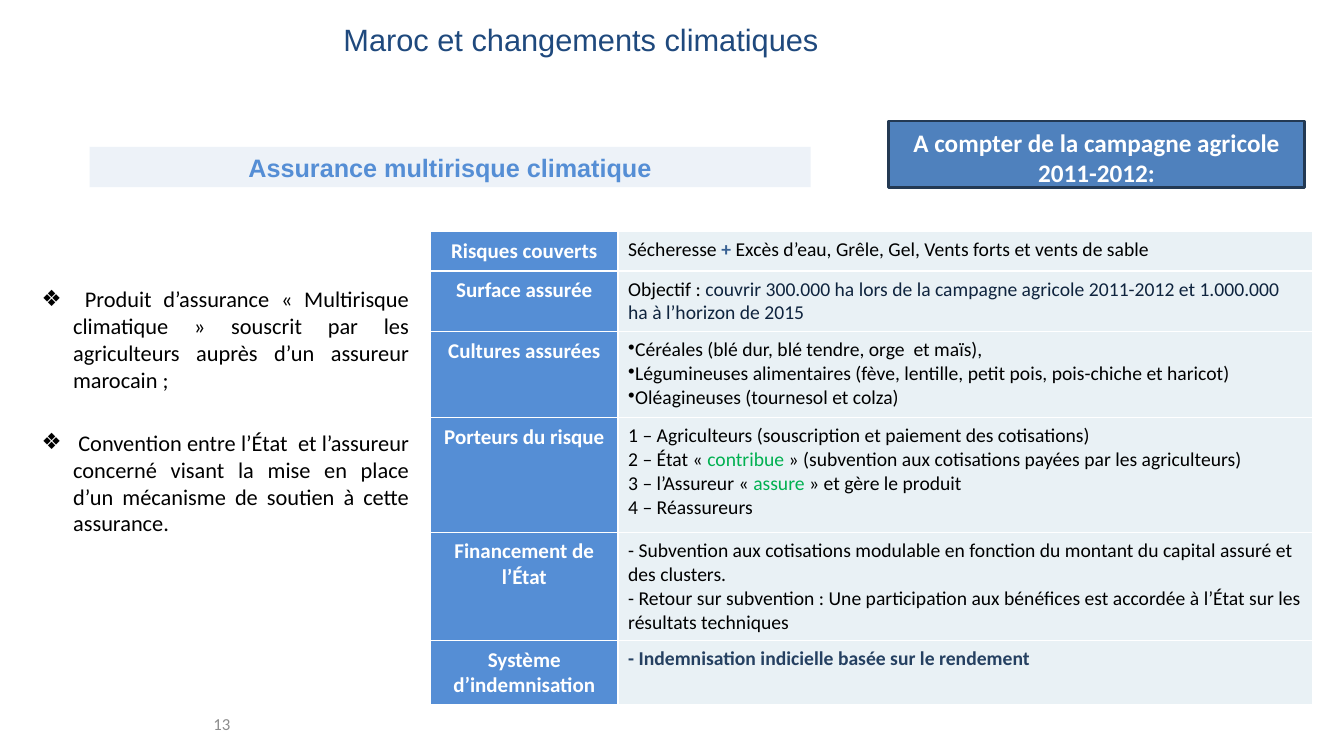
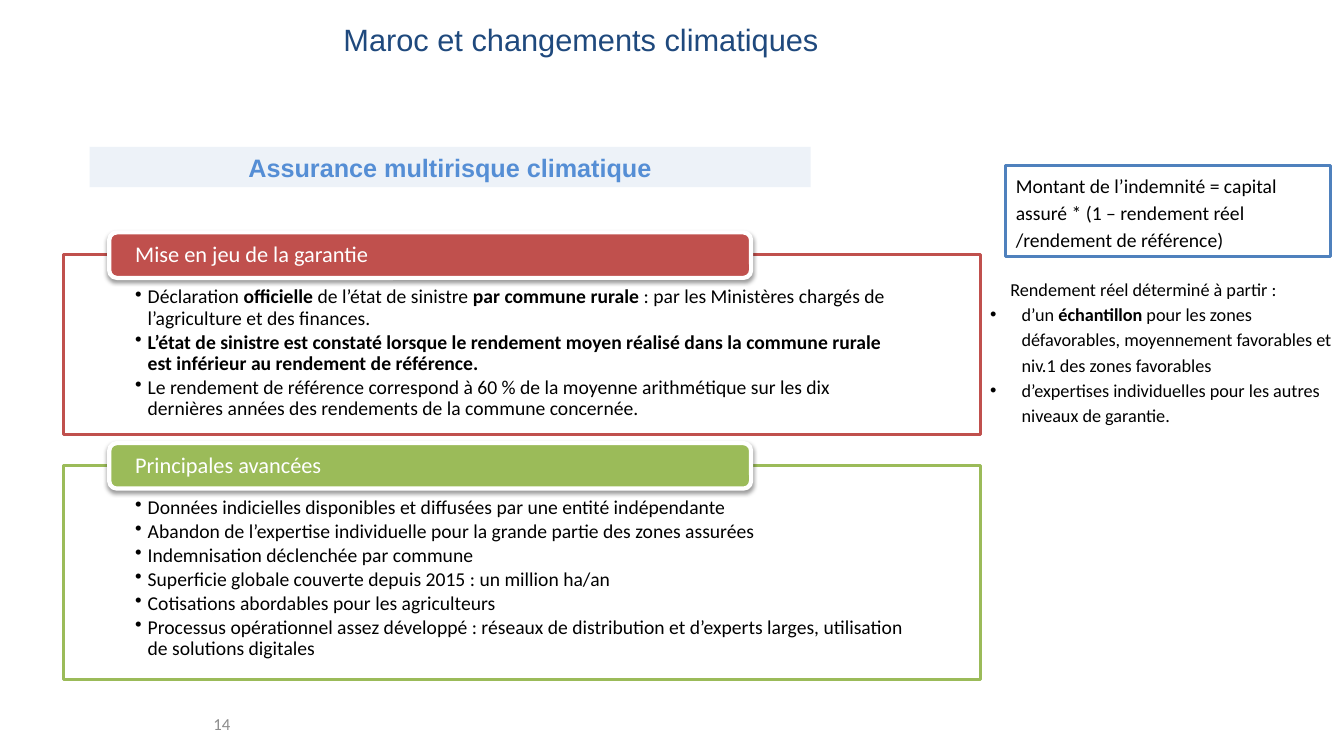
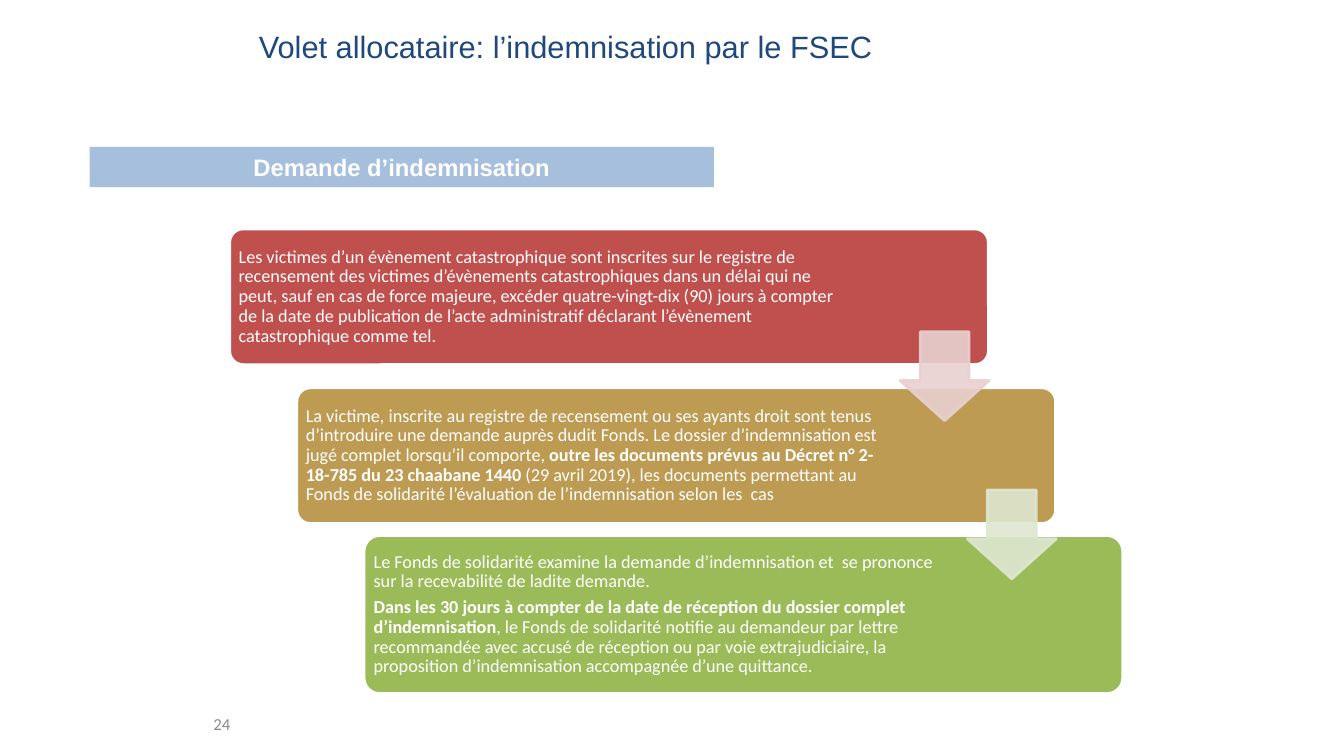
from lxml.etree import SubElement
from pptx import Presentation
from pptx.dml.color import RGBColor
from pptx.enum.shapes import MSO_SHAPE
from pptx.enum.text import MSO_ANCHOR, MSO_AUTO_SIZE, PP_ALIGN
from pptx.oxml.ns import qn
from pptx.util import Pt

BLACK = RGBColor(0x00, 0x00, 0x00)
WHITE = RGBColor(0xFF, 0xFF, 0xFF)
GREY = RGBColor(0x8C, 0x8C, 0x8C)
NAVY = RGBColor(0x1F, 0x49, 0x7D)
BLUE = RGBColor(0x4F, 0x81, 0xBD)
SKY = RGBColor(0x55, 0x8E, 0xD5)
PALE_BLUE = RGBColor(0xDC, 0xE6, 0xF2)
DARK_OUTLINE = RGBColor(0x23, 0x39, 0x53)
CELL_FILL = RGBColor(0xE9, 0xF1, 0xF5)
PLUS_BLUE = RGBColor(0x37, 0x60, 0x92)
TARGET_BLUE = RGBColor(0x0F, 0x24, 0x3E)
SYSTEM_BLUE = RGBColor(0x25, 0x40, 0x61)
KEYWORD_GREEN = RGBColor(0x00, 0xB0, 0x50)
RED = RGBColor(0xC0, 0x50, 0x4D)
OCHRE = RGBColor(0xBD, 0x9B, 0x53)
GREEN = RGBColor(0x9B, 0xBB, 0x59)
PALE_RED = RGBColor(0xE8, 0xD0, 0xD0)
PALE_GREEN = RGBColor(0xDE, 0xE7, 0xD1)

BODY_FONT = "Calibri"
HEADING_FONT = "Arial"
TITLE_ONLY = 5
TITLE_AND_BODY = 1
BOLD = {"bold": True}

COVER_ROWS = [
    (28, "Risques couverts", [
        ["Sécheresse ", ("+ ", {"color": PLUS_BLUE, "bold": True}),
         "Excès d’eau, Grêle, Gel, Vents forts et vents de sable"]]),
    (43, "Surface assurée", [
        ["Objectif :",
         (" couvrir 300.000 ha lors de la campagne agricole 2011-2012 et 1.000.000 "
          "ha à l’horizon de 2015", {"color": TARGET_BLUE})]]),
    (61.5, "Cultures assurées", [
        "Céréales (blé dur, blé tendre, orge  et maïs),",
        "Légumineuses alimentaires (fève, lentille, petit pois, pois-chiche et haricot)",
        "Oléagineuses (tournesol et colza)"]),
    (82, "Porteurs du risque", [
        "1 – Agriculteurs (souscription et paiement des cotisations)",
        ["2 – État « ", ("contribue", {"color": KEYWORD_GREEN}),
         " » (subvention aux cotisations payées par les agriculteurs)"],
        ["3 – l’Assureur « ", ("assure", {"color": KEYWORD_GREEN}),
         " » et gère le produit"],
        "4 – Réassureurs"]),
    (76.5, "Financement de l’État", [
        "- Subvention aux cotisations modulable en fonction du montant du capital "
        "assuré et des clusters.",
        "- Retour sur subvention : Une participation aux bénéfices est accordée à "
        "l’État sur les résultats techniques"]),
    (45.5, "Système d’indemnisation", [
        [("- Indemnisation indicielle basée sur le rendement",
          {"color": SYSTEM_BLUE, "bold": True})]]),
]
BULLETED_ROW = "Cultures assurées"

GUARANTEE_ITEMS = [
    ["Déclaration ", ("officielle", BOLD), " de l’état de sinistre ",
     ("par commune rurale", BOLD),
     " : par les Ministères chargés de l’agriculture et des finances."],
    [("L’état de sinistre est constaté lorsque le rendement moyen réalisé dans la "
      "commune rurale est inférieur au rendement de référence.", BOLD)],
    "Le rendement de référence correspond à 60 % de la moyenne arithmétique sur les "
    "dix dernières années des rendements de la commune concernée.",
]
PROGRESS_ITEMS = [
    "Données indicielles disponibles et diffusées par une entité indépendante",
    "Abandon de l’expertise individuelle pour la grande partie des zones assurées",
    "Indemnisation déclenchée par commune",
    "Superficie globale couverte depuis 2015 : un million ha/an",
    "Cotisations abordables pour les agriculteurs",
    "Processus opérationnel assez développé : réseaux de distribution et d’experts "
    "larges, utilisation de solutions digitales",
]

# Top, height, right margin, fill, paragraphs
CLAIM_STEPS = [
    (163.5, 97, 102, RED, [
        "Les victimes d’un évènement catastrophique sont inscrites sur le registre de "
        "recensement des victimes d’évènements catastrophiques dans un délai qui ne "
        "peut, sauf en cas de force majeure, excéder quatre-vingt-dix (90) jours à "
        "compter de la date de publication de l’acte administratif déclarant "
        "l’évènement catastrophique comme tel."]),
    (277, 97, 114, OCHRE, [
        ["La victime, inscrite au registre de recensement ou ses ayants droit sont "
         "tenus d’introduire une demande auprès dudit Fonds. Le dossier "
         "d’indemnisation est jugé complet lorsqu’il comporte, ",
         ("outre les documents prévus au Décret n° 2-18-785 du 23 chaabane 1440", BOLD),
         " (29 avril 2019), les documents permettant au Fonds de solidarité "
         "l’évaluation de l’indemnisation selon les  cas"]]),
    (382.5, 113, 115, GREEN, [
        "Le Fonds de solidarité examine la demande d’indemnisation et  se prononce "
        "sur la recevabilité de ladite demande.",
        [("Dans les 30 jours à compter de la date de réception du dossier complet "
          "d’indemnisation", BOLD),
         ", le Fonds de solidarité notifie au demandeur par lettre recommandée avec "
         "accusé de réception ou par voie extrajudiciaire, la proposition "
         "d’indemnisation accompagnée d’une quittance."]]),
]


def add_paragraph(frame, text, size=14, color=BLACK, font=BODY_FONT, bold=False,
                  align=PP_ALIGN.LEFT, bullet=None, left=0, hanging=0,
                  before=0, after=0, spacing=1.0):
    """Add text, a string or a list of strings and (string, run format) pairs."""
    paragraph = frame.add_paragraph() if frame.text else frame.paragraphs[0]
    paragraph.alignment = align
    paragraph.space_before = Pt(before)
    paragraph.space_after = Pt(after)
    paragraph.line_spacing = spacing
    properties = paragraph._p.get_or_add_pPr()
    properties.set("marL", str(Pt(left)))
    properties.set("indent", str(Pt(-hanging)))
    if bullet:
        SubElement(properties, qn("a:buChar"), char=bullet)
    else:
        SubElement(properties, qn("a:buNone"))
    for piece in [text] if isinstance(text, str) else text:
        words, changes = (piece, {}) if isinstance(piece, str) else piece
        run = paragraph.add_run()
        run.text = words
        run.font.name = font
        run.font.size = Pt(size)
        run.font.bold = changes.get("bold", bold)
        run.font.color.rgb = changes.get("color", color)


def set_frame(frame, anchor=MSO_ANCHOR.TOP, margins=(7.2, 3.6, 7.2, 3.6)):
    frame.word_wrap = True
    frame.auto_size = MSO_AUTO_SIZE.NONE
    frame.vertical_anchor = anchor
    (frame.margin_left, frame.margin_top,
     frame.margin_right, frame.margin_bottom) = map(Pt, margins)
    return frame


def place(shape, left, top, width, height):
    shape.left, shape.top = Pt(left), Pt(top)
    shape.width, shape.height = Pt(width), Pt(height)


def set_opacity(color_format_parent, percent):
    for color in color_format_parent.iter(qn("a:srgbClr")):
        SubElement(color, qn("a:alpha"), val=str(percent * 1000))


def add_box(slide, bounds, fill, line=None, line_width=2, kind=MSO_SHAPE.RECTANGLE,
            adjustments=(), opacity=None):
    shape = slide.shapes.add_shape(kind, *map(Pt, bounds))
    shape.shadow.inherit = False
    for index, value in enumerate(adjustments):
        shape.adjustments[index] = value
    shape.fill.solid()
    shape.fill.fore_color.rgb = fill
    if line is None:
        shape.line.fill.background()
    else:
        shape.line.color.rgb = line
        shape.line.width = Pt(line_width)
    if opacity:
        set_opacity(shape._element.spPr, opacity)
    return shape


def add_drop_shadow(shape):
    effects = shape._element.spPr.find(qn("a:effectLst"))
    shadow = SubElement(effects, qn("a:outerShdw"), blurRad=str(Pt(3.1)),
                        dist=str(Pt(1.6)), dir="5400000", rotWithShape="0")
    SubElement(shadow, qn("a:srgbClr"), val=str(BLACK))
    set_opacity(shadow, 38)


def start_slide(presentation, layout, title, number, left=185, top=11):
    slide = presentation.slides.add_slide(presentation.slide_layouts[layout])
    place(slide.shapes.title, left, top, 460, 34)
    add_paragraph(set_frame(slide.shapes.title.text_frame), title, size=22,
                  color=NAVY, font=HEADING_FONT, align=PP_ALIGN.CENTER)
    number_box = slide.shapes.add_textbox(Pt(3.6), Pt(502.5), Pt(168), Pt(29))
    add_paragraph(set_frame(number_box.text_frame, MSO_ANCHOR.MIDDLE), number,
                  size=12, color=GREY, align=PP_ALIGN.RIGHT)
    return slide


def add_band(slide, text, width=515, size=18, fill=PALE_BLUE, color=SKY):
    band = add_box(slide, (64, 105, width, 28.8), fill, opacity=50)
    add_paragraph(set_frame(band.text_frame, MSO_ANCHOR.MIDDLE), text, size=size,
                  color=color, font=HEADING_FONT, bold=True, align=PP_ALIGN.CENTER)


def set_cell(cell, fill):
    """Fill the cell, give it white borders and return its text frame."""
    cell.fill.solid()
    cell.fill.fore_color.rgb = fill
    cell.margin_left = cell.margin_right = Pt(7.2)
    cell.margin_top = cell.margin_bottom = Pt(4.6)
    properties = cell._tc.get_or_add_tcPr()
    for index, side in enumerate(("lnL", "lnR", "lnT", "lnB")):
        border = SubElement(properties, qn(f"a:{side}"), w=str(Pt(1)))
        solid = SubElement(border, qn("a:solidFill"))
        SubElement(solid, qn("a:srgbClr"), val=str(WHITE))
        properties.insert(index, border)
    return cell.text_frame


def add_cover_table(slide):
    total = sum(row[0] for row in COVER_ROWS)
    table = slide.shapes.add_table(len(COVER_ROWS), 2, Pt(307.5), Pt(165.6),
                                   Pt(630), Pt(total)).table
    table.first_row = table.horz_banding = False
    table.columns[0].width, table.columns[1].width = Pt(134), Pt(496)
    for index, (height, heading, paragraphs) in enumerate(COVER_ROWS):
        table.rows[index].height = Pt(height)
        add_paragraph(set_cell(table.cell(index, 0), SKY), heading, size=15,
                      color=WHITE, bold=True, align=PP_ALIGN.CENTER)
        frame = set_cell(table.cell(index, 1), CELL_FILL)
        bullet = "•" if heading == BULLETED_ROW else None
        for text in paragraphs:
            add_paragraph(frame, text, bullet=bullet)


def add_panel(slide, top, height, color, heading, items):
    """Draw a framed list with its heading tab across the top edge."""
    panel = add_box(slide, (45.5, top, 655, height), WHITE, color)
    frame = set_frame(panel.text_frame, margins=(51, 23, 51, 8))
    for item in items:
        add_paragraph(frame, item, bullet="•", left=9, hanging=9, after=2, spacing=0.9)
    tab = add_box(slide, (78, top - 16, 458.5, 32.5), color, WHITE, 3,
                  MSO_SHAPE.ROUNDED_RECTANGLE)
    add_drop_shadow(tab)
    add_paragraph(set_frame(tab.text_frame, MSO_ANCHOR.MIDDLE, (17, 0, 17, 0)),
                  heading, size=16, color=WHITE, spacing=0.9)


def build_cover_slide(presentation):
    slide = start_slide(presentation, TITLE_AND_BODY,
                        "Maroc et changements climatiques", "13")
    add_band(slide, "Assurance multirisque climatique")
    callout = add_box(slide, (634.5, 86.5, 297.5, 47.5), BLUE, DARK_OUTLINE)
    add_paragraph(set_frame(callout.text_frame, MSO_ANCHOR.BOTTOM, (0, 3.6, 0, 0)),
                  "A compter de la campagne agricole 2011-2012:", size=18,
                  color=WHITE, bold=True, align=PP_ALIGN.CENTER)
    body = slide.placeholders[1]
    place(body, 22.5, 200, 277, 195)
    frame = set_frame(body.text_frame)
    product = (" Produit d’assurance « Multirisque climatique » souscrit par les "
               "agriculteurs auprès d’un assureur marocain ;")
    agreement = (" Convention entre l’État  et l’assureur concerné visant la mise en "
                 "place d’un mécanisme de soutien à cette assurance.")
    for text, before in ((product, 0), (agreement, 26)):
        add_paragraph(frame, text, size=16, align=PP_ALIGN.JUSTIFY, bullet="❖",
                      left=22.5, hanging=22.5, before=before)
    add_cover_table(slide)


def build_guarantee_slide(presentation):
    slide = start_slide(presentation, TITLE_AND_BODY,
                        "Maroc et changements climatiques", "14")
    add_band(slide, "Assurance multirisque climatique")
    add_panel(slide, 182, 128.5, RED, "Mise en jeu de la garantie", GUARANTEE_ITEMS)
    add_panel(slide, 332.5, 153, GREEN, "Principales avancées", PROGRESS_ITEMS)
    formula = add_box(slide, (718.5, 118, 232, 65), WHITE, BLUE)
    add_paragraph(set_frame(formula.text_frame),
                  "Montant de l’indemnité = capital assuré * (1 – rendement réel "
                  "/rendement de référence)", spacing=1.15)
    body = slide.placeholders[1]
    place(body, 700, 193, 260, 115)
    frame = set_frame(body.text_frame, margins=(7.2, 3.6, 5, 3.6))
    add_paragraph(frame, "Rendement réel déterminé à partir :", size=13, left=14.5,
                  align=PP_ALIGN.JUSTIFY, spacing=1.15)
    for text in (
            ["d’un ", ("échantillon", BOLD), " pour les zones défavorables, "
             "moyennement favorables et niv.1 des zones favorables"],
            "d’expertises individuelles pour les autres niveaux de garantie."):
        add_paragraph(frame, text, size=13, bullet="•", left=22.5, hanging=22.5,
                      spacing=1.15)


def build_claim_slide(presentation):
    slide = start_slide(presentation, TITLE_ONLY,
                        "Volet allocataire: l’indemnisation par le FSEC", "24",
                        left=174, top=16.5)
    add_band(slide, "Demande d’indemnisation", width=446, size=17, fill=BLUE,
             color=WHITE)
    step_shift = 48
    for index, (top, height, right_margin, fill, paragraphs) in enumerate(CLAIM_STEPS):
        step = add_box(slide, (164 + index * step_shift, top, 542, height), fill, WHITE,
                       kind=MSO_SHAPE.ROUNDED_RECTANGLE, adjustments=(0.1,))
        frame = set_frame(step.text_frame, MSO_ANCHOR.MIDDLE,
                          (3.6, 3.6, right_margin, 3.6))
        for text in paragraphs:
            add_paragraph(frame, text, size=13, color=WHITE, after=4.5, spacing=0.9)
    for index, (top, color) in enumerate(((237, PALE_RED), (350, PALE_GREEN))):
        add_box(slide, (643 + index * step_shift, top, 63.5, 63.5), color, color,
                kind=MSO_SHAPE.DOWN_ARROW, adjustments=(0.55, 0.45), opacity=90)


def main():
    presentation = Presentation()
    presentation.slide_width, presentation.slide_height = Pt(960), Pt(540)
    build_cover_slide(presentation)
    build_guarantee_slide(presentation)
    build_claim_slide(presentation)
    presentation.save("out.pptx")


if __name__ == "__main__":
    main()
